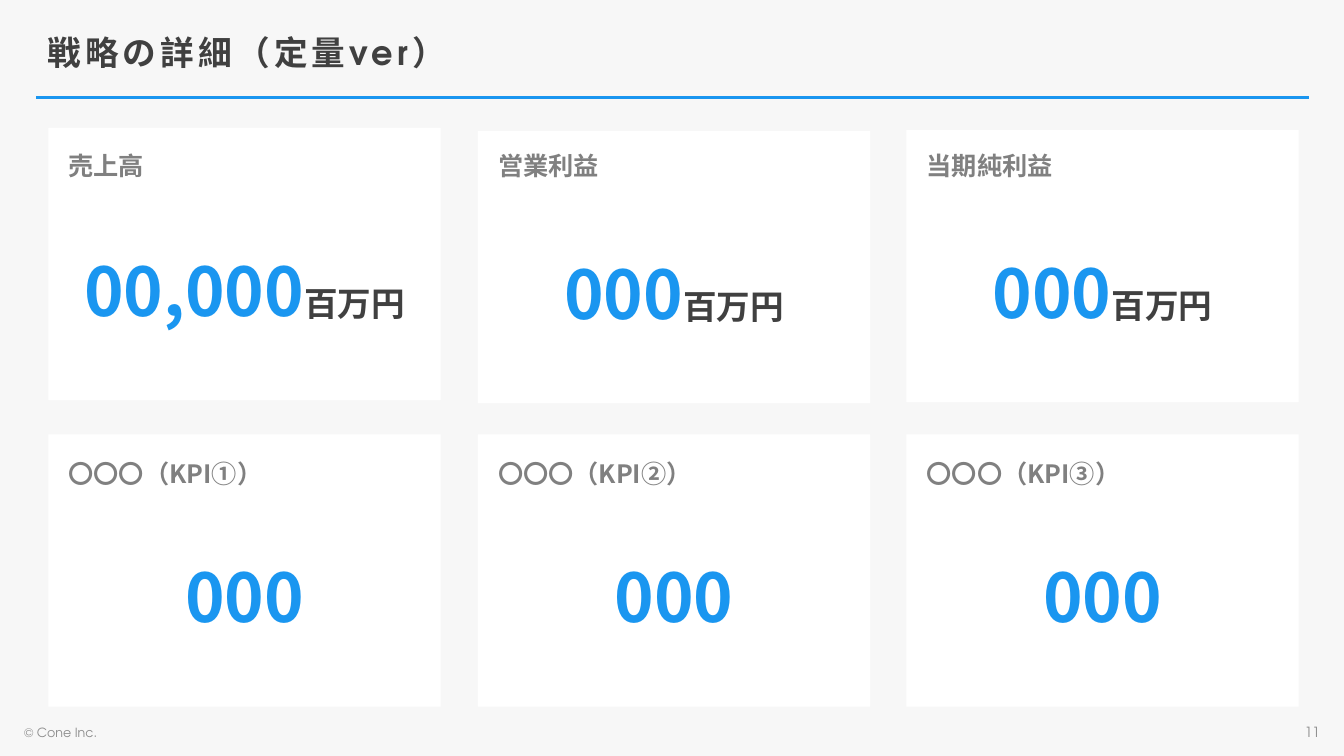
from lxml.etree import SubElement
from pptx import Presentation
from pptx.dml.color import RGBColor
from pptx.enum.shapes import MSO_CONNECTOR, MSO_SHAPE
from pptx.enum.text import MSO_ANCHOR, MSO_AUTO_SIZE, PP_ALIGN
from pptx.oxml.ns import qn
from pptx.util import Pt

PX = 9144
BLUE = RGBColor(0x1A, 0x96, 0xF0)
DARK = RGBColor(0x40, 0x40, 0x40)
LABEL_GRAY = RGBColor(0x80, 0x80, 0x80)
FOOTER_GRAY = RGBColor(0x8C, 0x8C, 0x8C)
WHITE = RGBColor(0xFF, 0xFF, 0xFF)
BACKGROUND = RGBColor(0xF7, 0xF7, 0xF7)
JAPANESE = "Noto Sans CJK JP"
GEOMETRIC = "TeX Gyre Adventor"

CARD_WIDTH, CARD_HEIGHT = 389, 270
LEFTS = (48, 474, 899)
ROWS = (
    (127, 74, (
        (127, "売上高", "00,000", "百万円"),
        (130, "営業利益", "000", "百万円"),
        (129, "当期純利益", "000", "百万円"),
    )),
    (429, 81, (
        (431, "〇〇〇（KPI①）", "000", ""),
        (431, "〇〇〇（KPI②）", "000", ""),
        (431, "〇〇〇（KPI③）", "000", ""),
    )),
)


def scaled(*lengths):
    return [length * PX for length in lengths]


def add_span(para, text, size, color, font=JAPANESE, bold=True):
    span = para.add_run()
    span.text = text
    span.font.size = Pt(size)
    span.font.bold = bold
    span.font.name = font
    span.font.color.rgb = color
    properties = span.font._element
    SubElement(properties, qn("a:ea")).set("typeface", JAPANESE)
    return properties


def set_frame(shape, insets, align):
    frame = shape.text_frame
    frame.word_wrap = True
    frame.auto_size = MSO_AUTO_SIZE.NONE
    frame.vertical_anchor = MSO_ANCHOR.MIDDLE
    (frame.margin_left, frame.margin_top,
     frame.margin_right, frame.margin_bottom) = scaled(*insets)
    para = frame.paragraphs[0]
    para.alignment = align
    return para


def add_panel(page, box, insets, align, fill=None):
    panel = page.shapes.add_shape(MSO_SHAPE.ROUNDED_RECTANGLE, *scaled(*box))
    panel.adjustments[0] = 0
    panel.shadow.inherit = False
    panel.line.fill.background()
    if fill is None:
        panel.fill.background()
    else:
        panel.fill.solid()
        panel.fill.fore_color.rgb = fill
    return set_frame(panel, insets, align)


def add_header(page, left, top, width, height):
    title = page.shapes.title
    title.left, title.top, title.width, title.height = scaled(left, top, width, height)
    para = set_frame(title, (10, 8, 10, 5), PP_ALIGN.LEFT)
    para.line_spacing = 0.9
    add_span(para, "戦略の詳細（定量ver）", 24, DARK, GEOMETRIC).set("spc", "300")

    rule_y = top + height + 13
    rule = page.shapes.add_connector(
        MSO_CONNECTOR.STRAIGHT, *scaled(left - 1, rule_y, left + width + 9, rule_y))
    rule.line.color.rgb = BLUE
    rule.line.width = Pt(2)
    SubElement(rule._element.spPr, qn("a:effectLst"))


def add_card(page, box, label_top, label_height, label, value, unit):
    left, _, width, _ = box
    para = add_panel(page, box, (10, 55, 10, 5), PP_ALIGN.CENTER, WHITE)
    add_span(para, value, 48, BLUE)
    if unit:
        add_span(para, unit, 24, DARK)
    para = add_panel(page, (left, label_top, width, label_height),
                     (20, 5, 10, 5), PP_ALIGN.LEFT)
    add_span(para, label, 18, LABEL_GRAY)


def add_footer(page, left, top, width, height):
    note_width = 300
    for note_left, text, size, align in (
        (left, "© Cone Inc.", 9, PP_ALIGN.LEFT),
        (left + width - note_width, "11", 10, PP_ALIGN.RIGHT),
    ):
        note = page.shapes.add_textbox(*scaled(note_left, top, note_width, height))
        para = set_frame(note, (10, 5, 10, 5), align)
        add_span(para, text, size, FOOTER_GRAY, GEOMETRIC, False)


def main():
    deck = Presentation()
    deck.slide_width, deck.slide_height = scaled(1333, 750)
    page = deck.slides.add_slide(deck.slide_layouts[5])
    page.background.fill.solid()
    page.background.fill.fore_color.rgb = BACKGROUND

    add_header(page, 37, 21, 1252, 63)
    for label_top, label_height, cards in ROWS:
        for left, (top, label, value, unit) in zip(LEFTS, cards):
            add_card(page, (left, top, CARD_WIDTH, CARD_HEIGHT),
                     label_top, label_height, label, value, unit)
    add_footer(page, 14, 713, 1305, 27)
    deck.save("out.pptx")


if __name__ == "__main__":
    main()
